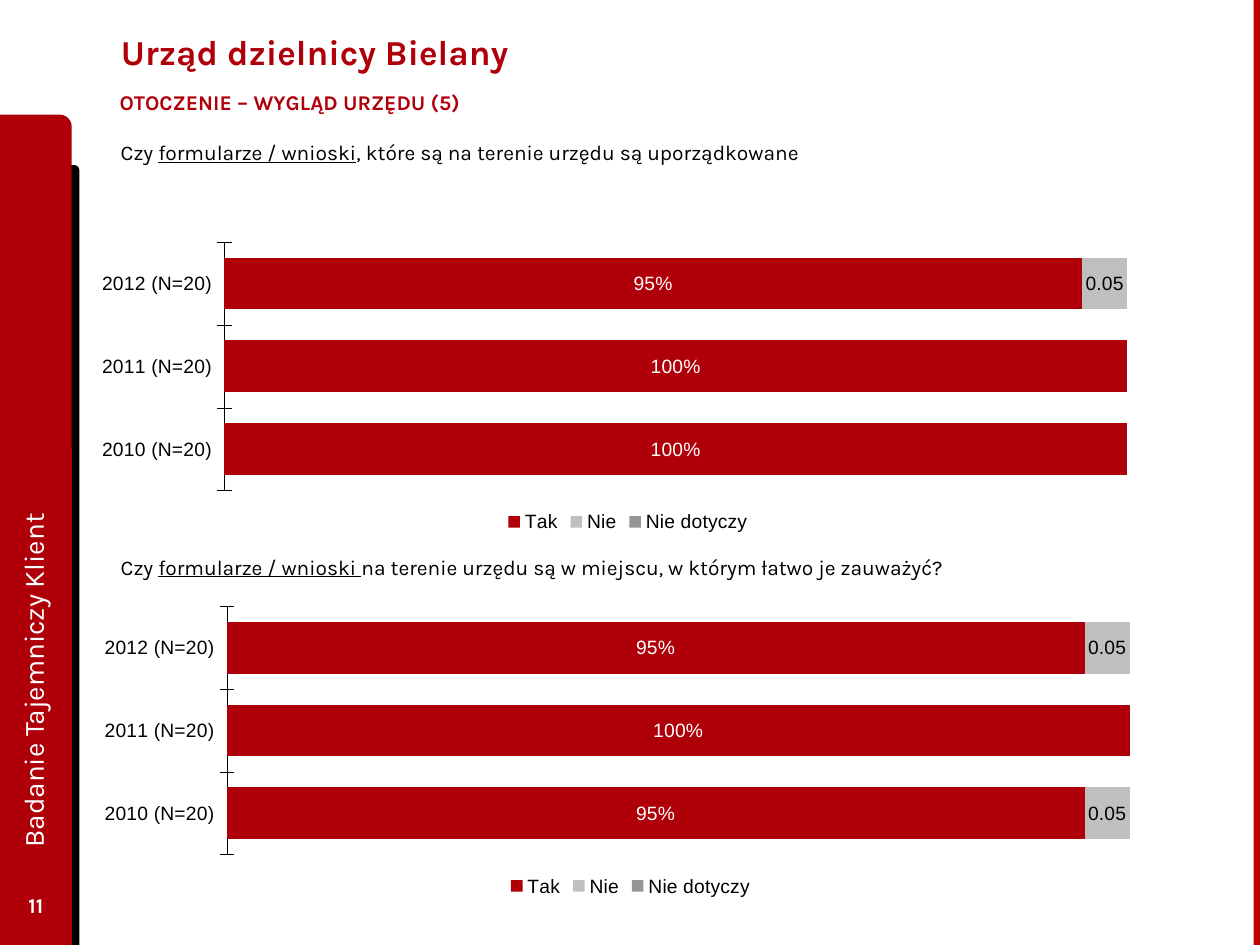
from dataclasses import dataclass

from pptx import Presentation, util as u
from pptx.chart.data import CategoryChartData
from pptx.dml.color import RGBColor
from pptx.enum import chart as charts, shapes, text
from pptx.oxml import parse_xml
from pptx.oxml.ns import nsdecls

RED, BLACK, WHITE = "AF000A", "000000", "FFFFFF"
HEADING_FONT, CHART_FONT = "Karla", "Arial"
YEARS = ["2012 (N=20)", "2011 (N=20)", "2010 (N=20)"]
PLOT_AREA = {"x": 0.12, "y": 0, "w": 0.85, "h": 0.84}


@dataclass
class Box:
    left: float
    top: float
    width: float
    height: float

    def lengths(self) -> list:
        return [u.Inches(v) for v in (self.left, self.top, self.width, self.height)]


@dataclass
class Run:
    text: str
    underline: bool = False


@dataclass
class Label:
    box: Box
    runs: list[Run]
    size: float = 12
    color: str = BLACK
    bold: bool = False
    align: text.PP_ALIGN = text.PP_ALIGN.LEFT
    anchor: text.MSO_ANCHOR = text.MSO_ANCHOR.TOP
    rotation: float = 0
    side_margin: float = 0.1


@dataclass
class Series:
    name: str
    values: list
    color: str
    label_color: str = BLACK
    label_format: str = "General"


@dataclass
class Question:
    label: Label
    chart_box: Box
    series: list[Series]


def rgb(color: str) -> RGBColor:
    return RGBColor.from_string(color)


def format_font(font, size: float, color: str, name: str, **extra) -> None:
    for key, value in {"size": u.Pt(size), "name": name, **extra}.items():
        setattr(font, key, value)
    font.color.rgb = rgb(color)


def draw_block(slide, kind: shapes.MSO_SHAPE, box: Box, color: str) -> None:
    shape = slide.shapes.add_shape(kind, *box.lengths())
    shape.shadow.inherit = False
    shape.fill.solid()
    shape.fill.fore_color.rgb = rgb(color)
    shape.line.fill.background()


def fill_label(shape, label: Label) -> None:
    shape.left, shape.top, shape.width, shape.height = label.box.lengths()
    shape.rotation = label.rotation
    frame = shape.text_frame
    margin = u.Inches(label.side_margin)
    settings = {"word_wrap": True, "vertical_anchor": label.anchor,
                "margin_left": margin, "margin_right": margin,
                "auto_size": text.MSO_AUTO_SIZE.NONE}
    for key, value in settings.items():
        setattr(frame, key, value)
    paragraph = frame.paragraphs[0]
    paragraph.alignment = label.align
    for part in label.runs:
        run = paragraph.add_run()
        run.text = part.text
        format_font(run.font, label.size, label.color, HEADING_FONT,
                    bold=label.bold, underline=part.underline)


def draw_label(slide, label: Label) -> None:
    fill_label(slide.shapes.add_textbox(*label.box.lengths()), label)


def place_plot_area(chart) -> None:
    """Fix the inner plot area as fractions of the chart."""
    plot_area = chart._chartSpace.chart.plotArea
    for layout in plot_area.findall("{*}layout"):
        plot_area.remove(layout)
    sizes = "".join(f'<c:{key} val="{value}"/>' for key, value in PLOT_AREA.items())
    plot_area.insert(0, parse_xml(
        f'<c:layout {nsdecls("c")}><c:manualLayout><c:layoutTarget val="inner"/>'
        f'<c:xMode val="edge"/><c:yMode val="edge"/>{sizes}'
        '</c:manualLayout></c:layout>'))


def draw_chart(slide, box: Box, series_list: list[Series]) -> None:
    data = CategoryChartData()
    data.categories = YEARS
    for series in series_list:
        data.add_series(series.name, series.values)
    chart = slide.shapes.add_chart(
        charts.XL_CHART_TYPE.BAR_STACKED, *box.lengths(), data).chart
    format_font(chart.font, 11, BLACK, CHART_FONT)
    chart.has_title = False
    chart.has_legend = True
    chart.legend.position = charts.XL_LEGEND_POSITION.BOTTOM
    chart.legend.include_in_layout = False
    format_font(chart.legend.font, 11, BLACK, CHART_FONT)
    place_plot_area(chart)

    plot = chart.plots[0]
    for key, value in {"gap_width": 60, "overlap": 100,
                       "vary_by_categories": False}.items():
        setattr(plot, key, value)
    for drawn, series in zip(plot.series, series_list):
        drawn.format.fill.solid()
        drawn.format.fill.fore_color.rgb = rgb(series.color)
        labels = drawn.data_labels
        for key, value in {"show_value": True, "number_format": series.label_format,
                           "number_format_is_linked": False}.items():
            setattr(labels, key, value)
        format_font(labels.font, 11, series.label_color, CHART_FONT)

    years = chart.category_axis
    years.reverse_order = True
    years.major_tick_mark = charts.XL_TICK_MARK.CROSS
    years.format.line.color.rgb = rgb(BLACK)
    years.format.line.width = u.Pt(0.23)
    format_font(years.tick_labels.font, 11, BLACK, CHART_FONT)
    for key, value in {"minimum_scale": 0, "maximum_scale": 1, "major_unit": 0.2,
                       "has_major_gridlines": False, "visible": False}.items():
        setattr(chart.value_axis, key, value)


def answers(yes: list, no: list, no_color: str) -> list[Series]:
    return [Series("Tak", yes, RED, WHITE, "0%"), Series("Nie", no, no_color),
            Series("Nie dotyczy", [None] * len(YEARS), "969696")]


MIDDLE = text.MSO_ANCHOR.MIDDLE
TITLE = Label(Box(0.86, 0.05, 7.77, 0.72), [Run("Urząd dzielnicy Bielany")],
              size=20, color=RED, bold=True, anchor=MIDDLE)
LABELS = [
    Label(Box(0.75, 0.66, 3.85, 0.33), [Run("OTOCZENIE – WYGLĄD URZĘDU (5)")],
          color=RED, bold=True, side_margin=0.2),
    Label(Box(0, 6.98, 0.57, 0.4), [Run("11")], color=WHITE, bold=True,
          align=text.PP_ALIGN.CENTER, anchor=MIDDLE),
    Label(Box(-2.62, 3.69, 5.76, 0.51), [Run("Badanie Tajemniczy Klient")],
          size=16, color=WHITE, anchor=MIDDLE, rotation=270),
]
QUESTIONS = [
    Question(Label(Box(0.86, 1.06, 5.83, 0.3), [
        Run("Czy "), Run("formularze / wnioski", True),
        Run(", które są na terenie urzędu są uporządkowane")]),
        Box(0.77, 1.92, 8.43, 2.35),
        answers([0.95, 1, 1], [0.05, None, None], "BFBFBF")),
    Question(Label(Box(0.86, 4.35, 7.87, 0.3), [
        Run("Czy "), Run("formularze / wnioski ", True),
        Run("na terenie urzędu są w miejscu, w którym łatwo je zauważyć?")]),
        Box(0.79, 4.81, 8.43, 2.35),
        answers([0.95, 1, 0.95], [0.05, None, 0.05], "C0C0C0")),
]
BLOCKS = [
    (shapes.MSO_SHAPE.ROUND_1_RECTANGLE, Box(0.39, 1.31, 0.24, 6.19), BLACK),
    (shapes.MSO_SHAPE.ROUND_1_RECTANGLE, Box(0, 0.91, 0.57, 6.59), RED),
    (shapes.MSO_SHAPE.RECTANGLE, Box(9.95, 0, 0.05, 7.5), "BD0000"),
]


def main() -> None:
    presentation = Presentation()
    presentation.slide_width, presentation.slide_height = u.Inches(10), u.Inches(7.5)
    slide = presentation.slides.add_slide(presentation.slide_layouts[5])
    for block in BLOCKS:
        draw_block(slide, *block)
    fill_label(slide.shapes.title, TITLE)
    for question in QUESTIONS:
        draw_label(slide, question.label)
        draw_chart(slide, question.chart_box, question.series)
    for label in LABELS:
        draw_label(slide, label)
    presentation.save("out.pptx")


if __name__ == "__main__":
    main()
